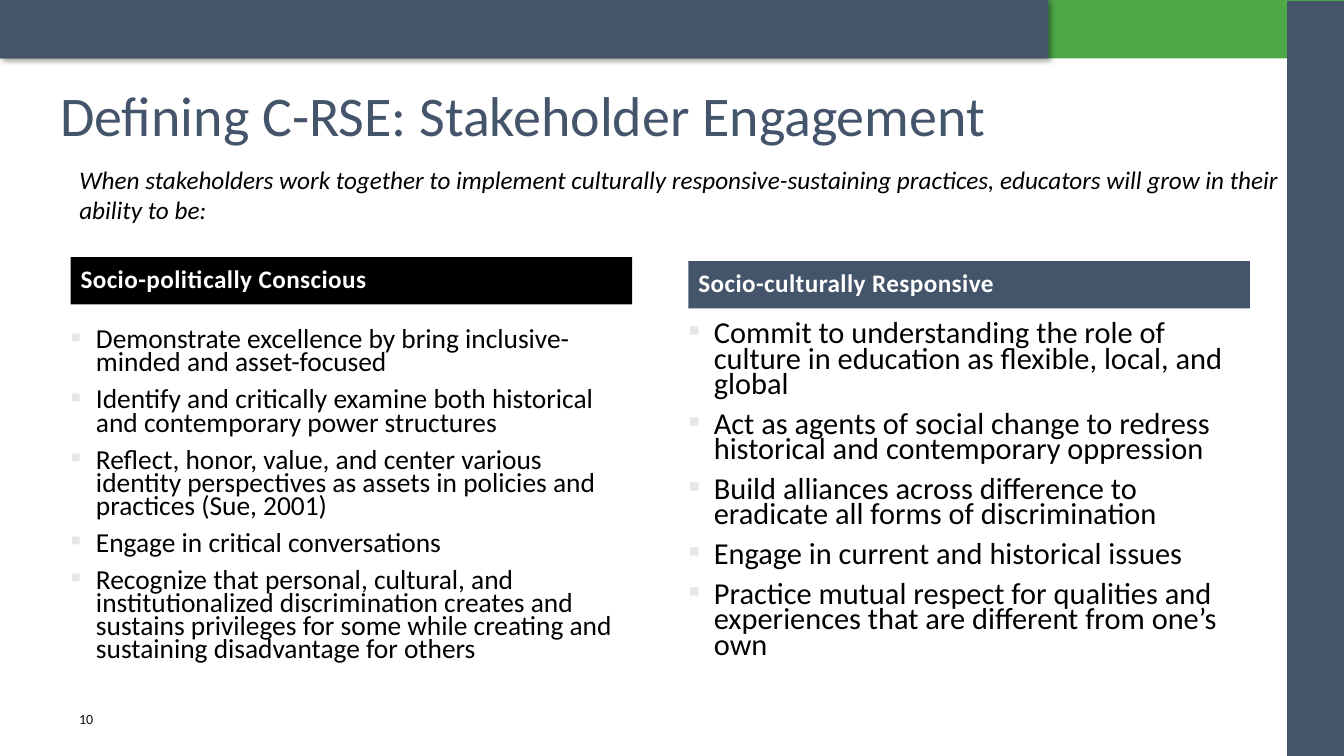
from dataclasses import dataclass

from lxml import etree
from pptx import Presentation
from pptx import util as u
from pptx.dml import color as c
from pptx.enum import shapes, text
from pptx.oxml import ns


@dataclass(frozen=True)
class Theme:
    slate: str = "44546A"
    green: str = "4EA848"
    black: str = "000000"
    white: str = "FFFFFF"
    pale: str = "E7E6E6"
    ink: str = "0D0D0D"
    face: str = "Calibri"
    title: float = 40
    lead: float = 18
    head: float = 18
    page: float = 10


T = Theme()
WIDE, HIGH = 33.87, 19.05
BAND = 1.47
MID = text.MSO_ANCHOR.MIDDLE

LEFT = [
    "Demonstrate excellence by bring inclusive-minded and asset-focused",
    "Identify and critically examine both historical and contemporary power structures",
    "Reflect, honor, value, and center various identity perspectives as assets "
    "in policies and practices (Sue, 2001)",
    "Engage in critical conversations",
    "Recognize that personal, cultural, and institutionalized discrimination creates "
    "and sustains privileges for some while creating and sustaining disadvantage for others",
]
RIGHT = [
    "Commit to understanding the role of culture in education as flexible, local, and global",
    "Act as agents of social change to redress historical and contemporary oppression",
    "Build alliances across difference to eradicate all forms of discrimination",
    "Engage in current and historical issues",
    "Practice mutual respect for qualities and experiences that are different from one’s own",
]


def put(item, vals):
    for name, val in vals.items():
        setattr(item, name, val)


def place(box):
    return [u.Cm(val) for val in box]


def block(slide, box, fill):
    """Plain filled rectangle."""
    rect = slide.shapes.add_shape(shapes.MSO_SHAPE.RECTANGLE, *place(box))
    rect.shadow.inherit = False
    rect.fill.solid()
    rect.fill.fore_color.rgb = c.RGBColor.from_string(fill)
    rect.line.fill.background()
    return rect


def frame(shape, pads, anchor=text.MSO_ANCHOR.TOP):
    """Text frame with left, top, right and bottom insets."""
    area = shape.text_frame
    sides = ("margin_left", "margin_top", "margin_right", "margin_bottom")
    put(area, dict(zip(sides, place(pads))))
    put(area, {"word_wrap": True, "vertical_anchor": anchor})
    return area


def write(para, words, size, ink, **more):
    run = para.add_run()
    run.text = words
    put(run.font, {"name": T.face, "size": u.Pt(size), **more})
    run.font.color.rgb = c.RGBColor.from_string(ink)
    return run


def label(slide, box, words, size, ink, pads, anchor=MID,
          align=text.PP_ALIGN.LEFT, **more):
    """Text box with one paragraph."""
    para = frame(slide.shapes.add_textbox(*place(box)), pads, anchor).paragraphs[0]
    para.alignment = align
    write(para, words, size, ink, **more)


def bullet(para):
    props = para._p.get_or_add_pPr()
    put_in = {"marL": u.Cm(0.64), "indent": -u.Cm(0.64)}
    for name, val in put_in.items():
        props.set(name, str(int(val)))
    tint = etree.SubElement(props, ns.qn("a:buClr"))
    etree.SubElement(tint, ns.qn("a:srgbClr"), val=T.pale)
    etree.SubElement(props, ns.qn("a:buSzPct"), val="110000")
    etree.SubElement(props, ns.qn("a:buFont"), typeface=T.face)
    etree.SubElement(props, ns.qn("a:buChar"), char="▪")


def shade(shape):
    """Soft shadow to the lower right."""
    fx = shape._element.spPr.find(ns.qn("a:effectLst"))
    cast = etree.SubElement(fx, ns.qn("a:outerShdw"), blurRad=str(u.Pt(4)),
                            dist=str(u.Pt(2)), dir="2700000", algn="tl")
    tint = etree.SubElement(cast, ns.qn("a:srgbClr"), val=T.black)
    etree.SubElement(tint, ns.qn("a:alpha"), val="40000")


def band(slide, box):
    """Top band: green strip with a slate strip over its left part."""
    x, y, w, h = box
    block(slide, box, T.green)
    shade(block(slide, (x, y, w * 0.78, h), T.slate))


def intro(slide, box):
    """Title line and the lead sentence below it."""
    x, y, w, h = box
    label(slide, (x, y, w, 2.54), "Defining C-RSE: Stakeholder Engagement",
          T.title, T.slate, (1.52, 0.25, 0, 0))
    label(slide, (x + 1.75, y + 2.54, w - 3.06, h - 2.54),
          "When stakeholders work together to implement culturally "
          "responsive-sustaining practices, educators will grow in their ability to be:",
          T.lead, T.black, (0.25, 0.13, 0.25, 0.13), text.MSO_ANCHOR.TOP, italic=True)


def column(slide, box, drop, head, fill, items, size):
    """Heading bar with a bullet list that starts `drop` below the box top."""
    x, y, w, h = box
    bar = block(slide, (x, y, w, 1.19), fill)
    para = frame(bar, [0.25] * 4, MID).paragraphs[0]
    put(para, {"alignment": text.PP_ALIGN.LEFT, "line_spacing": 0.9})
    run = write(para, head, T.head, T.white, bold=True)
    run._r.get_or_add_rPr().set("spc", "30")

    area = frame(slide.shapes.add_textbox(*place((x, y + drop, w, h - drop))), [0] * 4)
    for num, words in enumerate(items):
        para = area.add_paragraph() if num else area.paragraphs[0]
        bullet(para)
        put(para, {"line_spacing": 0.7, "space_before": u.Pt(10 if num else 0)})
        write(para, words, size, T.black)


def main():
    deck = Presentation()
    put(deck, {"slide_width": u.Cm(WIDE), "slide_height": u.Cm(HIGH)})
    slide = deck.slides.add_slide(deck.slide_layouts[6])

    band(slide, (0, 0, WIDE, BAND))
    intro(slide, (0, BAND, WIDE, 4.34))
    column(slide, (1.78, 6.48, 14.15, 11.12), 1.85,
           "Socio-politically Conscious", T.black, LEFT, 19.6)
    column(slide, (17.35, 6.58, 14.15, 10.56), 1.57,
           "Socio-culturally Responsive", T.slate, RIGHT, 21.7)

    # Page number and right edge
    label(slide, (1.75, 17.6, 0.84, 1.02), "10", T.page, T.ink,
          (0, 0.13, 0, 0.13), align=text.PP_ALIGN.CENTER)
    block(slide, (32.44, 0.03, WIDE - 32.44, HIGH - 0.03), T.slate)
    deck.save("out.pptx")


if __name__ == "__main__":
    main()
